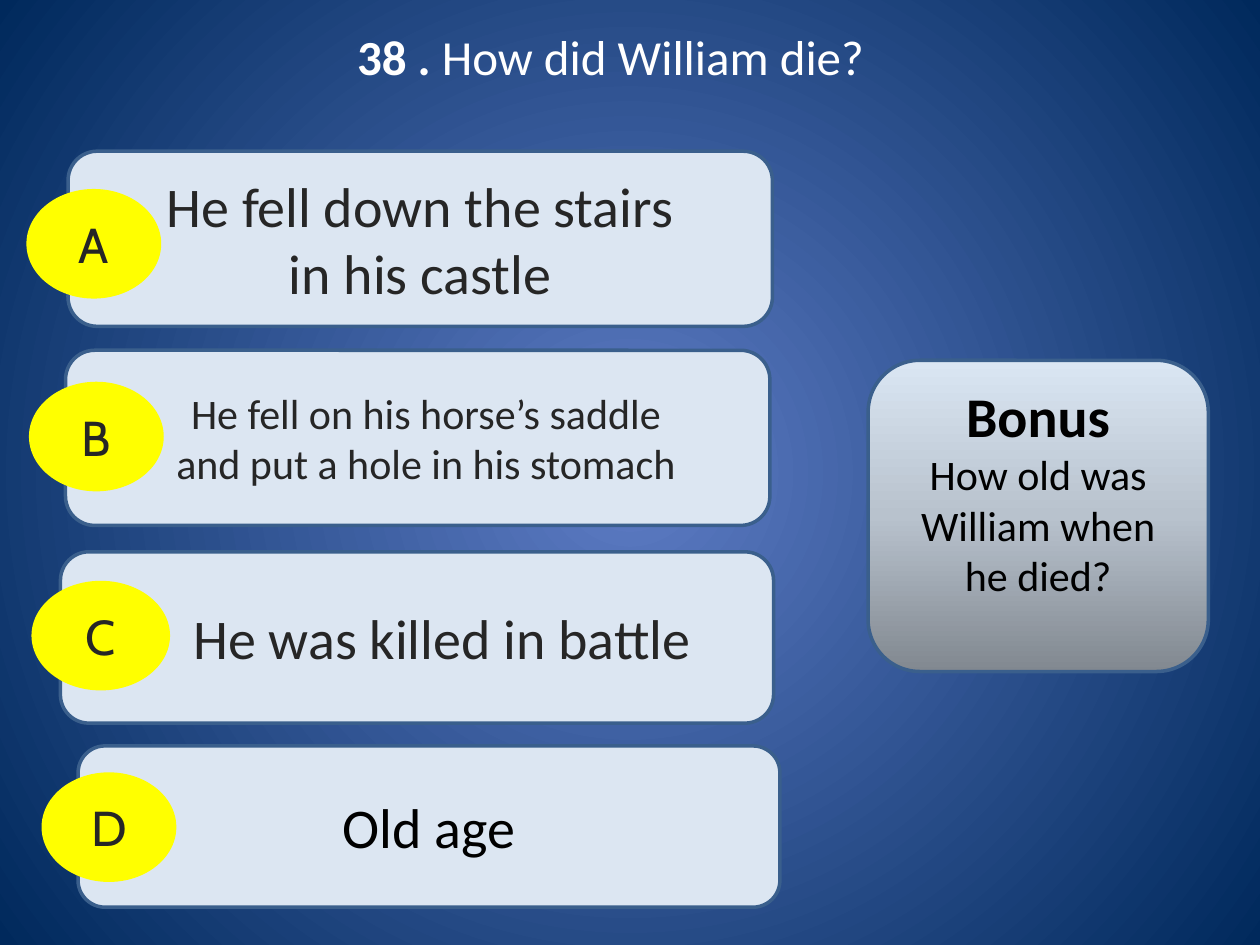
import pptx
import pptx.dml.color
import pptx.enum.shapes
import pptx.enum.text
import pptx.oxml
import pptx.oxml.ns
import pptx.util
from pptx.util import Inches

RGBColor = pptx.dml.color.RGBColor
SHAPE = pptx.enum.shapes.MSO_SHAPE
ANCHOR = pptx.enum.text.MSO_ANCHOR

WHITE = RGBColor(0xFF, 0xFF, 0xFF)
BLACK = RGBColor(0, 0, 0)
INK = RGBColor(0x26, 0x26, 0x26)
PALE_BLUE = RGBColor(0xDC, 0xE6, 0xF2)
EDGE_BLUE = RGBColor(0x3A, 0x5F, 0x8C)
YELLOW = RGBColor(0xFF, 0xFF, 0)
GLOW_BLUE = RGBColor(0x5E, 0x7C, 0xC5)
NAVY = RGBColor(0, 0x29, 0x5C)
STEEL = RGBColor(0x81, 0x88, 0x90)
SILVER = RGBColor(0xB8, 0xC2, 0xCD)
ICE = RGBColor(0xDA, 0xE6, 0xF3)

RADIAL = ('<a:path path="circle"><a:fillToRect l="50000" t="50000" '
          'r="50000" b="50000"/></a:path>')
UPWARD = '<a:lin ang="16200000" scaled="0"/>'

# letter, answer box, oval box, text, size, colour, left inset
ANSWERS = [
    ("A", (0.54, 1.2, 5.59, 1.39), (0.21, 1.5, 1.07, 0.87),
     "He fell down the stairs\nin his castle", 32, INK, 0.1),
    ("B", (0.52, 2.78, 5.59, 1.39), (0.23, 3.03, 1.07, 0.87),
     "He fell on his horse’s saddle\nand put a hole in his stomach", 24, INK, 0.23),
    ("C", (0.48, 4.38, 5.66, 1.36), (0.25, 4.61, 1.1, 0.87),
     "He was killed in battle", 32, INK, 0.5),
    ("D", (0.62, 5.92, 5.57, 1.28), (0.33, 6.13, 1.07, 0.87),
     "Old age", 32, BLACK, 0.1),
]


def set_gradient(element, stops, direction):
    """Replace the first solid fill in element with a gradient."""
    gs = "".join(f'<a:gs pos="{pos * 1000}"><a:srgbClr val="{color}"/></a:gs>'
                 for pos, color in stops)
    grad = pptx.oxml.parse_xml(
        f'<a:gradFill {pptx.oxml.ns.nsdecls("a")} rotWithShape="1">'
        f'<a:gsLst>{gs}</a:gsLst>{direction}</a:gradFill>')
    solid = element.xpath(".//a:solidFill")[0]
    solid.getparent().replace(solid, grad)


def add_text(s, text, size=32, color=INK, font="Calibri", bold=False):
    """Append text to the shape's centred paragraph, breaking at newlines."""
    p = s.text_frame.paragraphs[0]
    p.alignment = pptx.enum.text.PP_ALIGN.CENTER
    for i, line in enumerate(text.split("\n")):
        if i:
            p.add_line_break()
        if line:
            r = p.add_run()
            r.text = line
            r.font.name = font
            r.font.size = pptx.util.Pt(size)
            r.font.bold = bold
            r.font.color.rgb = color


def add_panel(slide, kind, box, fill, line=None):
    s = slide.shapes.add_shape(kind, *map(Inches, box))
    s.shadow.inherit = False
    s.fill.solid()
    s.fill.fore_color.rgb = fill
    if line is None:
        s.line.fill.background()
    else:
        s.line.color.rgb = line
        s.line.width = pptx.util.Pt(2)
    s.text_frame.word_wrap = True
    s.text_frame.vertical_anchor = ANCHOR.MIDDLE
    return s


def add_question(slide):
    s = slide.shapes.add_textbox(*map(Inches, (0.18, 0.16, 9.55, 1.11)))
    s.text_frame.word_wrap = True
    s.text_frame.margin_right = Inches(0.32)
    add_text(s, "38 .", size=28, color=WHITE, bold=True)
    add_text(s, " How did William die?", size=28, color=WHITE)


def add_answer(slide, letter, box, oval, text, size, color, inset):
    s = add_panel(slide, SHAPE.ROUNDED_RECTANGLE, box, PALE_BLUE, EDGE_BLUE)
    s.text_frame.margin_left = Inches(inset)
    add_text(s, text, size=size, color=color)
    badge = add_panel(slide, SHAPE.OVAL, oval, YELLOW)
    add_text(badge, letter, size=28, font="Cabin")


def add_bonus(slide):
    s = add_panel(slide, SHAPE.ROUNDED_RECTANGLE, (6.89, 2.86, 2.7, 2.47),
                  SILVER, EDGE_BLUE)
    set_gradient(s._element.spPr, [(0, STEEL), (50, SILVER), (100, ICE)], UPWARD)
    s.text_frame.margin_bottom = Inches(0.45)
    add_text(s, "Bonus\n", color=BLACK, bold=True)
    add_text(s, "How old was William when he died?", size=24, color=BLACK)


def main():
    prs = pptx.Presentation()
    prs.slide_width, prs.slide_height = Inches(10), Inches(7.5)
    slide = prs.slides.add_slide(prs.slide_layouts[6])
    slide.background.fill.solid()
    slide.background.fill.fore_color.rgb = NAVY
    set_gradient(slide._element.cSld.bg, [(0, GLOW_BLUE), (100, NAVY)], RADIAL)
    add_question(slide)
    for answer in ANSWERS:
        add_answer(slide, *answer)
    add_bonus(slide)
    prs.save("out.pptx")


if __name__ == "__main__":
    main()
